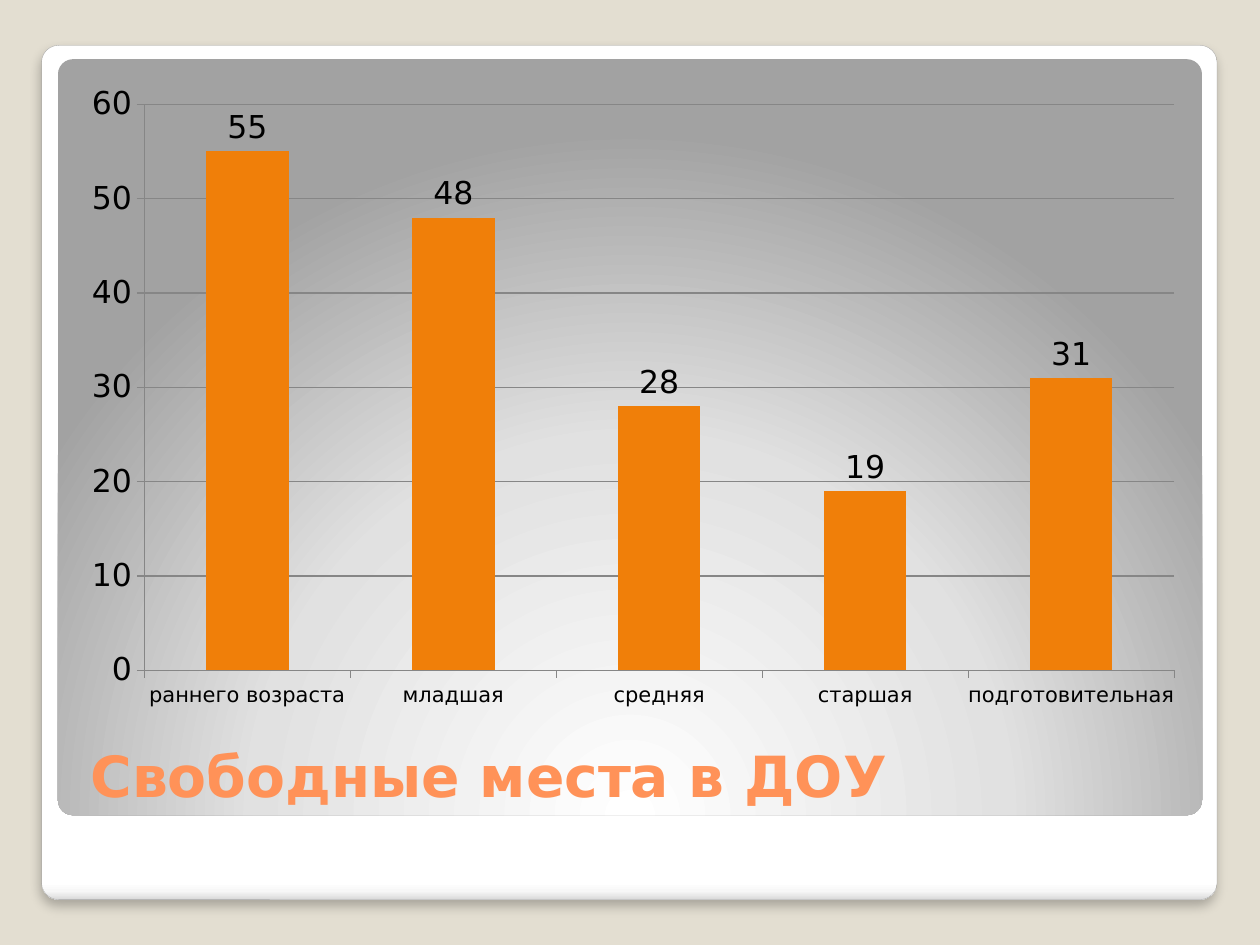
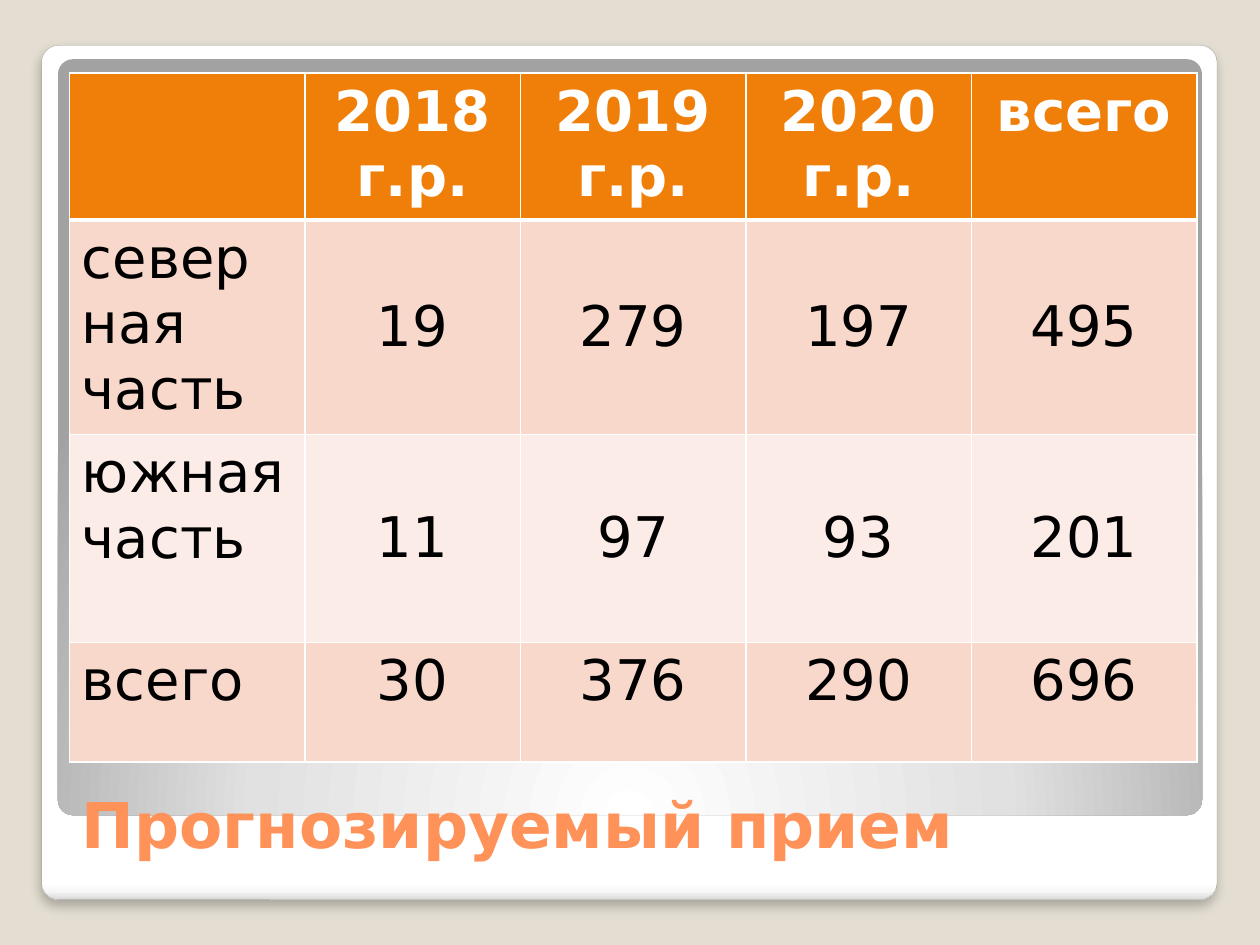
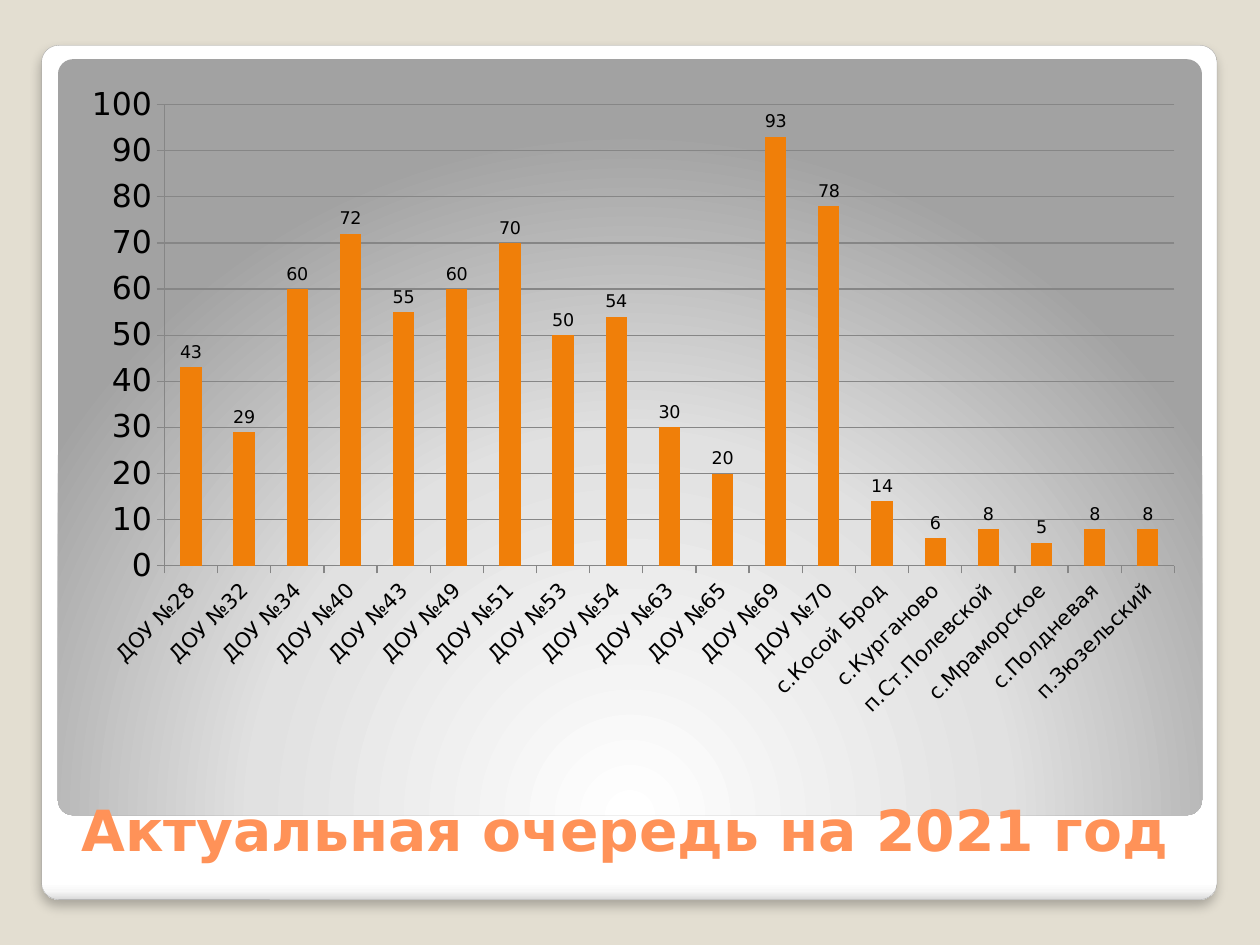
"""Build three slides on kindergarten places: free places, forecast intake and the queue."""
import pptx
import pptx.chart.data
import pptx.dml.color
import pptx.enum.chart
import pptx.enum.shapes
import pptx.enum.text
import pptx.oxml
import pptx.oxml.ns
import pptx.util

FONT = "DejaVu Sans"
HUES = {"back": "E3DED1", "edge": "A4A4A4", "title": "FF9258", "bar": "F07F09", "grid": "868686",
        "odd": "F9D8CC", "even": "FCECE7", "white": "FFFFFF", "black": "000000"}
HUES = {name: pptx.dml.color.RGBColor.from_string(code) for name, code in HUES.items()}
NS = pptx.oxml.ns.nsdecls("a")
ALIGN = pptx.enum.text.PP_ALIGN
ANCHOR = pptx.enum.text.MSO_ANCHOR

deck = pptx.Presentation()
deck.slide_width = pptx.util.Inches(10)
deck.slide_height = pptx.util.Inches(7.5)
COL, ROW = deck.slide_width / 100, deck.slide_height / 100


def box(left, top, width, height):
    """Turn columns and rows of a 100 by 100 grid into slide lengths."""
    return round(left * COL), round(top * ROW), round(width * COL), round(height * ROW)


def put(frame, text, size=32, hue="black", bold=False, align=ALIGN.LEFT):
    """Write text into a frame, one paragraph a line."""
    frame.word_wrap = True
    frame.text = text
    for para in frame.paragraphs:
        para.alignment = align
        para.font.size = pptx.util.Pt(size)
        para.font.name = FONT
        para.font.bold = bold
        para.font.color.rgb = HUES[hue]


cards = [
    ((3.3, 4.8, 93.3, 90.4), [(0, "FFFFFF"), (98, "FFFFFF"), (99, "F7F7F7"), (100, "DADADA")],
     '<a:lin ang="5400000" scaled="0"/>'),
    ((4.6, 6.27, 90.8, 80), [(0, "FFFFFF"), (55, "E1E1E1"), (100, "A2A2A2")],
     '<a:path path="circle"><a:fillToRect l="50000" t="175000" r="50000" b="-75000"/></a:path>'),
]
shade = (f'<a:outerShdw {NS} blurRad="76200" dist="50800" dir="5400000" algn="t" rotWithShape="0">'
         '<a:srgbClr val="000000"><a:alpha val="25000"/></a:srgbClr></a:outerShdw>')
titles = [
    ("Свободные места в ДОУ", 32.4, (6.2, 77.33, 89.5, 8.93)),
    ("Прогнозируемый прием", 36, (5.5, 80.27, 89.5, 11.47)),
    ("Актуальная очередь на 2021 год", 32.4, (5.5, 80.4, 89.5, 11.6)),
]

slides = []
for title, size, place in titles:
    slide = deck.slides.add_slide(deck.slide_layouts[6])
    slides.append(slide)
    slide.background.fill.solid()
    slide.background.fill.fore_color.rgb = HUES["back"]
    for area, stops, way in cards:
        card = slide.shapes.add_shape(pptx.enum.shapes.MSO_SHAPE.ROUNDED_RECTANGLE, *box(*area))
        card.adjustments[0] = 0.02
        card.shadow.inherit = False
        marks = "".join(f'<a:gs pos="{pos * 1000}"><a:srgbClr val="{code}"/></a:gs>' for pos, code in stops)
        props = card._element.spPr
        props.insert(2, pptx.oxml.parse_xml(
            f'<a:gradFill {NS} rotWithShape="1"><a:gsLst>{marks}</a:gsLst>{way}</a:gradFill>'))
        if area == cards[0][0]:
            card.line.color.rgb = HUES["edge"]
            card.line.width = pptx.util.Pt(0.16)
            props.find(pptx.oxml.ns.qn("a:effectLst")).append(pptx.oxml.parse_xml(shade))
        else:
            card.line.fill.background()
    label = slide.shapes.add_textbox(*box(*place)).text_frame
    label.vertical_anchor = ANCHOR.BOTTOM
    put(label, title, size=size, hue="title", bold=True)

homes = [f"ДОУ №{num}" for num in (28, 32, 34, 40, 43, 49, 51, 53, 54, 63, 65, 69, 70)]
towns = ["с.Косой Брод", "с.Курганово", "п.Ст.Полевской", "с.Мраморское", "с.Полдневая", "п.Зюзельский"]
charts = [
    (slides[0], 68.53, 18, ["раннего возраста", "младшая", "средняя", "старшая", "подготовительная"],
     [55, 48, 28, 19, 31]),
    (slides[2], 69.6, 10, homes + towns,
     [43, 29, 60, 72, 55, 60, 70, 50, 54, 30, 20, 93, 78, 14, 6, 8, 5, 8, 8]),
]
for slide, height, size, names, counts in charts:
    data = pptx.chart.data.CategoryChartData()
    data.categories = names
    data.add_series("Series 1", counts)
    chart = slide.shapes.add_chart(pptx.enum.chart.XL_CHART_TYPE.COLUMN_CLUSTERED,
                                   *box(5.5, 7.73, 89.5, height), data).chart
    chart.has_legend = False
    chart.has_title = False
    chart.font.name = FONT
    chart.font.size = pptx.util.Pt(18)
    chart.font.color.rgb = HUES["black"]
    plot = chart.plots[0]
    plot.gap_width = 150
    plot.vary_by_categories = False
    bars = plot.series[0]
    bars.format.fill.solid()
    bars.format.fill.fore_color.rgb = HUES["bar"]
    tags = bars.data_labels
    tags.show_value = True
    tags.position = pptx.enum.chart.XL_LABEL_POSITION.OUTSIDE_END
    tags.font.size = pptx.util.Pt(size)
    tags.font.name = FONT
    tags.font.color.rgb = HUES["black"]
    chart.value_axis.has_major_gridlines = True
    for axis in (chart.category_axis, chart.value_axis):
        axis.major_tick_mark = pptx.enum.chart.XL_TICK_MARK.OUTSIDE
        axis.format.line.color.rgb = HUES["grid"]
    chart.value_axis.major_gridlines.format.line.color.rgb = HUES["grid"]
    chart.category_axis.tick_labels.font.size = pptx.util.Pt(12)

rows = [
    ["", "2018 г.р.", "2019 г.р.", "2020 г.р.", "всего"],
    ["север\nная часть", "19", "279", "197", "495"],
    ["южная часть", "11", "97", "93", "201"],
    ["всего", "30", "376", "290", "696"],
]
table = slides[1].shapes.add_table(4, 5, *box(5.5, 7.73, 89.5, 69.33)).table
for col, wide in zip(table.columns, (18.7, 17.1, 17.9, 17.9, 17.9)):
    col.width = round(wide * COL)
for row, tall in zip(table.rows, (12.67, 22, 22, 12.67)):
    row.height = round(tall * ROW)
for r, words in enumerate(rows):
    for c, word in enumerate(words):
        cell = table.cell(r, c)
        put(cell.text_frame, word, hue="black" if r else "white", bold=r == 0,
            align=ALIGN.CENTER if c or not r else ALIGN.LEFT)
        if c and r in (1, 2):
            cell.vertical_anchor = ANCHOR.MIDDLE
        cell.fill.solid()
        cell.fill.fore_color.rgb = HUES[("bar", "odd", "even", "odd")[r]]
        for spot, side in enumerate("LRTB"):
            thick = 3 if (r, side) in ((0, "B"), (1, "T")) else 1
            cell._tc.tcPr.insert(spot, pptx.oxml.parse_xml(
                f'<a:ln{side} {NS} w="{pptx.util.Pt(thick)}"><a:solidFill>'
                f'<a:srgbClr val="{HUES["white"]}"/></a:solidFill></a:ln{side}>'))

deck.save("out.pptx")
